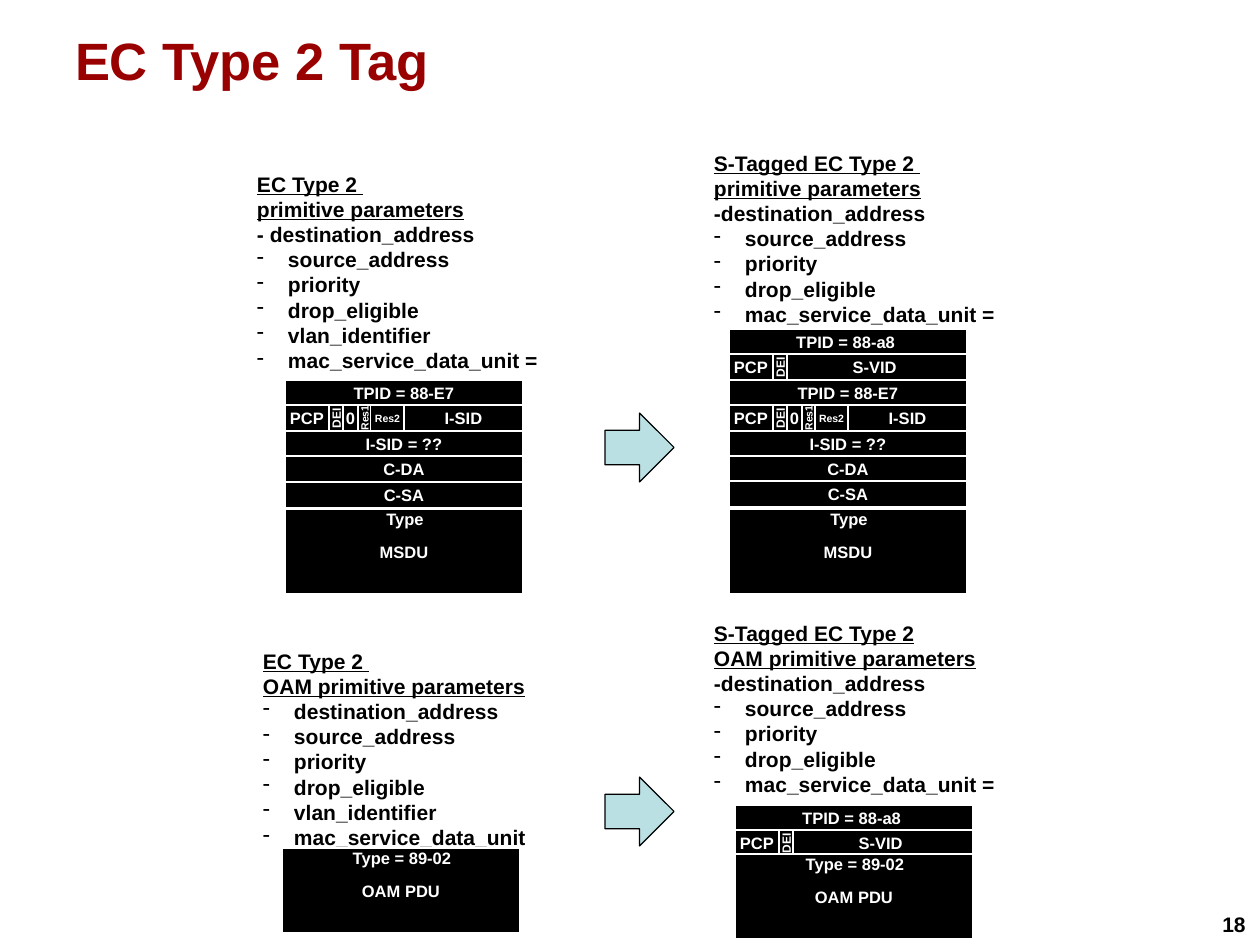
from dataclasses import dataclass

from lxml import etree
from pptx import Presentation
from pptx import util as u
from pptx.dml.color import RGBColor
from pptx.enum import shapes, text
from pptx.oxml.ns import qn


@dataclass(frozen=True)
class Theme:
    font: str = "Arial"
    title_color: str = "990000"
    ink: str = "000000"
    paper: str = "FFFFFF"
    arrow_fill: str = "BBE0E3"
    title_size: int = 35
    list_size: int = 14
    field_size: int = 11
    flag_size: int = 8
    reserved_size: int = 7
    line_width: float = 0.75


THEME = Theme()
PX = 914400 / 108
ROW_PITCH = 25.4
ROW_HEIGHT = 26
STACK_WIDTH = 238
HANG = 31

# Each row is a list of (label, width, size, upright) fields.
PCP = ("PCP", 44, THEME.field_size, False)
DEI = ("DEI", 14, THEME.flag_size, True)
S_TAG = [
    [("TPID = 88-a8 ", STACK_WIDTH, THEME.field_size, False)],
    [PCP, DEI, ("S-VID ", 180, THEME.field_size, False)],
]
I_TAG_FIELDS = [
    PCP,
    DEI,
    ("0", 15, THEME.field_size, False),
    ("Res1", 13, THEME.reserved_size, True),
    ("Res2", 33, THEME.reserved_size, False),
    ("I-SID", 119, THEME.field_size, False),
]
I_TAG = [
    [("TPID = 88-E7", STACK_WIDTH, THEME.field_size, False)],
    I_TAG_FIELDS,
] + [[(label, STACK_WIDTH, THEME.field_size, False)]
     for label in ("I-SID = ??", "C-DA", "C-SA")]


def px(*lengths):
    return [u.Emu(round(length * PX)) for length in lengths]


def write(frame, lines, *, size, color, align=text.PP_ALIGN.LEFT,
          anchor=text.MSO_ANCHOR.TOP, inset=(0, 0), wrap=False,
          underlined=0, bulleted_from=None):
    """Fill a frame: the first `underlined` lines are underlined,
    and lines from index `bulleted_from` on get a dash."""
    frame.word_wrap = wrap
    frame.auto_size = text.MSO_AUTO_SIZE.NONE
    frame.vertical_anchor = anchor
    frame.margin_left, frame.margin_top = px(*inset)
    frame.margin_right, frame.margin_bottom = px(*inset)
    for index, line in enumerate(lines):
        paragraph = frame.paragraphs[0] if index == 0 else frame.add_paragraph()
        paragraph.alignment = align
        if bulleted_from is not None and index >= bulleted_from:
            add_dash(paragraph)
        run = paragraph.add_run()
        run.text = line
        run.font.name = THEME.font
        run.font.size = u.Pt(size)
        run.font.bold = True
        run.font.underline = index < underlined
        run.font.color.rgb = RGBColor.from_string(color)


def add_dash(paragraph):
    properties = paragraph._p.get_or_add_pPr()
    hang = px(HANG)[0]
    properties.set("marL", str(hang))
    properties.set("indent", str(-hang))
    etree.SubElement(properties, qn("a:buChar")).set("char", "-")


def add_filled(slide, preset, box, fill, line):
    shape = slide.shapes.add_shape(preset, *px(*box))
    shape.shadow.inherit = False
    shape.fill.solid()
    shape.fill.fore_color.rgb = RGBColor.from_string(fill)
    shape.line.color.rgb = RGBColor.from_string(line)
    shape.line.width = u.Pt(THEME.line_width)
    return shape


def add_field(slide, label, box, size=THEME.field_size, upright=False):
    field = add_filled(slide, shapes.MSO_SHAPE.RECTANGLE, box, THEME.ink, THEME.paper)
    write(field.text_frame, [label], size=size, color=THEME.paper,
          align=text.PP_ALIGN.CENTER, anchor=text.MSO_ANCHOR.MIDDLE)
    if upright:
        field.text_frame._txBody.bodyPr.set("vert", "vert270")


def add_rows(slide, left, top, rows):
    for index, fields in enumerate(rows):
        x, y = left, round(top + index * ROW_PITCH)
        for label, width, size, upright in fields:
            add_field(slide, label, (x, y, width, ROW_HEIGHT), size, upright)
            x += width


def add_payload(slide, left, top, heading, body):
    add_field(slide, body, (left, top, STACK_WIDTH, 85))
    label = slide.shapes.add_textbox(*px(left + 1, top - 3, STACK_WIDTH, ROW_HEIGHT))
    write(label.text_frame, [heading], size=THEME.field_size, color=THEME.paper,
          align=text.PP_ALIGN.CENTER, anchor=text.MSO_ANCHOR.MIDDLE)


def add_parameters(slide, box, lines, bulleted_from):
    parameters = slide.shapes.add_textbox(*px(*box))
    write(parameters.text_frame, lines, size=THEME.list_size, color=THEME.ink,
          inset=(10, 5), wrap=True, underlined=2, bulleted_from=bulleted_from)


def add_title(slide, title):
    placeholder = slide.shapes.title
    placeholder.left, placeholder.top, placeholder.width, placeholder.height = px(
        62, 22, 1134, 120)
    write(placeholder.text_frame, [title], size=THEME.title_size,
          color=THEME.title_color, inset=(13, 6), wrap=True)


def main():
    deck = Presentation()
    deck.slide_width, deck.slide_height = px(1260, 945)
    slide = deck.slides.add_slide(deck.slide_layouts[5])
    add_title(slide, "EC Type 2 Tag")

    number = slide.shapes.add_textbox(*px(1210, 907, 48, 37))
    write(number.text_frame, ["18"], size=THEME.list_size, color=THEME.ink,
          align=text.PP_ALIGN.CENTER, inset=(10, 5))

    shared = ["source_address", "priority", "drop_eligible"]
    data_unit = "mac_service_data_unit ="
    add_parameters(slide, (247, 166, 327, 213),
                   ["EC Type 2 ", "primitive parameters", "- destination_address",
                    *shared, "vlan_identifier", data_unit], 3)
    add_parameters(slide, (253, 643, 327, 213),
                   ["EC Type 2 ", "OAM primitive parameters", "destination_address",
                    *shared, "vlan_identifier", "mac_service_data_unit"], 2)
    for top, first, second in (
            (145, "S-Tagged EC Type 2 ", "primitive parameters"),
            (615, "S-Tagged EC Type 2", "OAM primitive parameters")):
        add_parameters(slide, (704, top, 323, 189),
                       [first, second, "-destination_address", *shared, data_unit], 3)

    for left, top, rows in ((285, 380, I_TAG), (729, 329, S_TAG + I_TAG)):
        add_rows(slide, left, top, rows)
        add_payload(slide, left, 509, "Type", "MSDU")
    add_payload(slide, 282, 848, "Type = 89-02", "OAM PDU")
    add_rows(slide, 735, 805, S_TAG)
    add_payload(slide, 735, 854, "Type = 89-02", "OAM PDU")

    for top in (413, 777):
        add_filled(slide, shapes.MSO_SHAPE.RIGHT_ARROW, (605, top, 69, 69),
                   THEME.arrow_fill, THEME.ink)

    deck.save("out.pptx")


if __name__ == "__main__":
    main()
